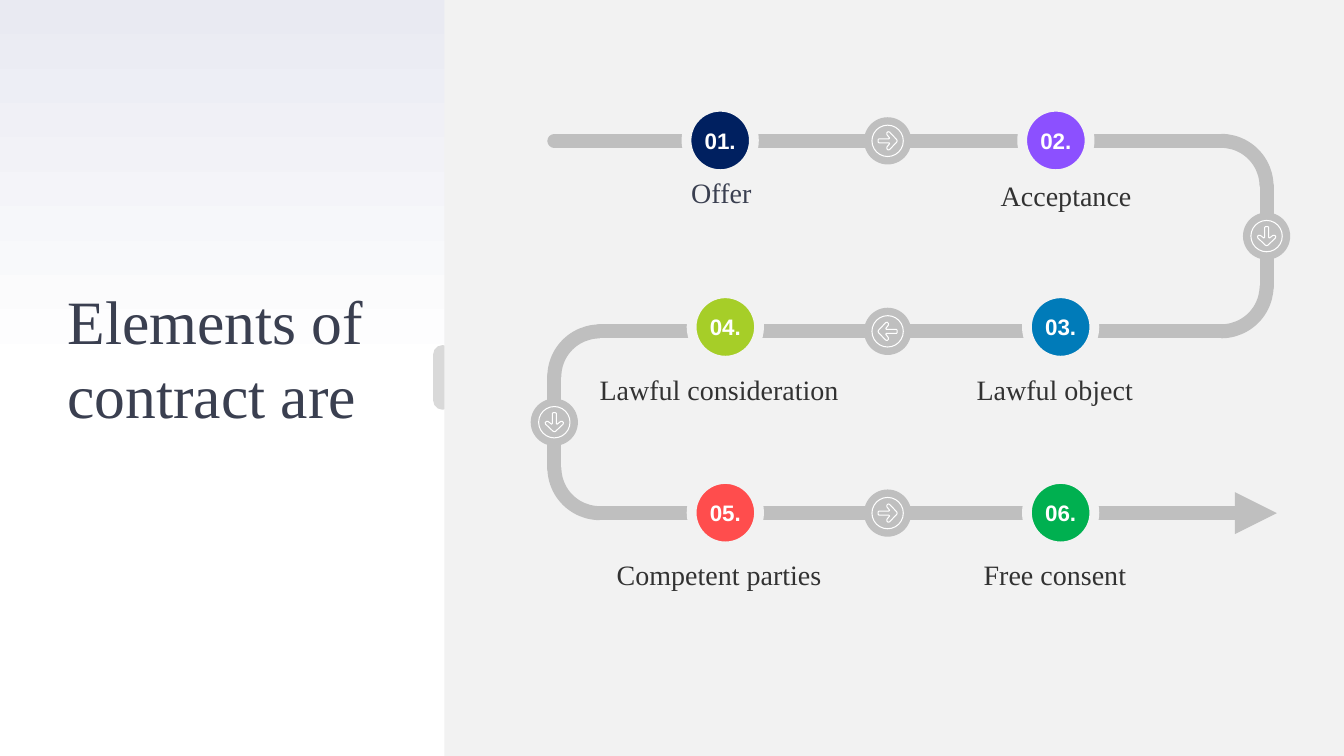
from dataclasses import dataclass
from typing import Optional

from lxml.etree import SubElement
from pptx import Presentation
from pptx.dml.color import RGBColor
from pptx.enum.shapes import MSO_CONNECTOR, MSO_SHAPE
from pptx.enum.text import MSO_ANCHOR, PP_ALIGN
from pptx.oxml.ns import qn
from pptx.util import Cm, Pt

WHITE = RGBColor(0xFF, 0xFF, 0xFF)
LAVENDER = RGBColor(0xE9, 0xEA, 0xF2)
PANEL = RGBColor(0xF2, 0xF2, 0xF2)
TAB = RGBColor(0xD9, 0xD9, 0xD9)
ROUTE = RGBColor(0xBF, 0xBF, 0xBF)
SLATE = RGBColor(0x3A, 0x3F, 0x50)
INK = RGBColor(0x32, 0x32, 0x32)
NAVY = RGBColor(0x00, 0x20, 0x60)
PURPLE = RGBColor(0x8C, 0x50, 0xFF)
BLUE = RGBColor(0x00, 0x7B, 0xB9)
LIME = RGBColor(0xA6, 0xCE, 0x28)
RED = RGBColor(0xFF, 0x4D, 0x4D)
GREEN = RGBColor(0x00, 0xB0, 0x50)

SERIF, SANS = "Times New Roman", "Arial"
LEFT, RIGHT = 13.97, 31.92
ROWS = TOP, MIDDLE, BOTTOM = 3.55, 8.35, 12.93
BEND = 2.29
RADIUS = BEND / 2
ROUTE_WIDTH = 10

ARROW_HALF = [(-0.24, -0.03), (-0.22, -0.05), (0.03, -0.05), (0.05, -0.07),
              (-0.02, -0.16), (-0.02, -0.2), (0.01, -0.23), (0.05, -0.22),
              (0.23, -0.03), (0.24, 0)]
ARROW = ARROW_HALF + [(x, -y) for x, y in reversed(ARROW_HALF[:-1])]


@dataclass
class Step:
    number: int
    label: str
    color: RGBColor
    x: float
    y: float
    label_x: float
    label_y: float
    label_w: float
    ink: RGBColor = INK
    spacing: float = 1.15
    align: PP_ALIGN = PP_ALIGN.JUSTIFY


@dataclass
class Badge:
    x: float
    y: float
    rotation: int = 0


@dataclass
class Bend:
    x: float
    y: float
    rotation: int


@dataclass
class Segment:
    x1: float
    y1: float
    x2: float
    y2: float
    arrow: bool = False


STEPS = [
    Step(1, "Offer", NAVY, 18.15, 3.54, 17.42, 4.43, 1.7, SLATE, 1.0, PP_ALIGN.LEFT),
    Step(2, "Acceptance", PURPLE, 26.61, 3.54, 25.22, 4.37, 3.33, align=PP_ALIGN.LEFT),
    Step(3, "Lawful object", BLUE, 26.73, 8.24, 24.61, 9.25, 3.96),
    Step(4, "Lawful consideration", LIME, 18.28, 8.24, 15.11, 9.25, 6.07),
    Step(5, "Competent parties", RED, 18.28, 12.92, 15.54, 13.92, 5.18),
    Step(6, "Free consent", GREEN, 26.73, 12.92, 24.79, 13.92, 3.61),
]
BADGES = [
    Badge(22.37, TOP),
    Badge(RIGHT, (TOP + MIDDLE) / 2, 90),
    Badge(22.37, MIDDLE, 180),
    Badge(LEFT, (MIDDLE + BOTTOM) / 2, 90),
    Badge(22.37, BOTTOM),
]
BENDS = [
    Bend(RIGHT - BEND, TOP, 0),
    Bend(RIGHT - BEND, MIDDLE - BEND, 90),
    Bend(LEFT, BOTTOM - BEND, 180),
    Bend(LEFT, MIDDLE, 270),
]
SEGMENTS = [
    Segment(LEFT, TOP, RIGHT - RADIUS, TOP),
    Segment(RIGHT, TOP + RADIUS, RIGHT, MIDDLE - RADIUS),
    Segment(LEFT + RADIUS, MIDDLE, RIGHT - RADIUS, MIDDLE),
    Segment(LEFT, BOTTOM - RADIUS, LEFT, MIDDLE + RADIUS),
    Segment(LEFT + RADIUS, BOTTOM, 32.18, BOTTOM, True),
]


def write(tf, text: str, *, size: float, color: RGBColor, font: str = SERIF,
          bold: bool = False, align: PP_ALIGN = PP_ALIGN.LEFT, spacing: float = 1.0,
          anchor: MSO_ANCHOR = MSO_ANCHOR.TOP, wrap: bool = True) -> None:
    tf.margin_left = tf.margin_right = tf.margin_top = tf.margin_bottom = 0
    tf.word_wrap = wrap
    tf.vertical_anchor = anchor
    p = tf.paragraphs[0]
    p.alignment = align
    p.line_spacing = spacing
    r = p.add_run()
    r.text = text
    r.font.name, r.font.size, r.font.bold = font, Pt(size), bold
    r.font.color.rgb = color


def style(sp, fill: Optional[RGBColor] = None, line: Optional[RGBColor] = None,
          width: float = 0.75, rotation: float = 0):
    sp.shadow.inherit = False
    sp.rotation = rotation
    if fill is None:
        sp.fill.background()
    else:
        sp.fill.solid()
        sp.fill.fore_color.rgb = fill
    if line is None:
        sp.line.fill.background()
    else:
        sp.line.color.rgb = line
        sp.line.width = Pt(width)
    return sp


def add_circle(shapes, x: float, y: float, d: float, **look):
    sp = shapes.add_shape(MSO_SHAPE.OVAL, Cm(x - d / 2), Cm(y - d / 2), Cm(d), Cm(d))
    return style(sp, **look)


def add_bend(s, bend: Bend) -> None:
    sp = s.shapes.add_shape(MSO_SHAPE.ARC, Cm(bend.x), Cm(bend.y), Cm(BEND), Cm(BEND))
    style(sp, line=ROUTE, width=ROUTE_WIDTH, rotation=bend.rotation)


def add_segment(s, seg: Segment) -> None:
    c = s.shapes.add_connector(MSO_CONNECTOR.STRAIGHT, Cm(seg.x1), Cm(seg.y1),
                               Cm(seg.x2), Cm(seg.y2))
    c.line.color.rgb = ROUTE
    c.line.width = Pt(ROUTE_WIDTH)
    props = c._element.spPr
    ln = props.find(qn("a:ln"))
    ln.set("cap", "rnd")
    if seg.arrow:
        SubElement(ln, qn("a:tailEnd"), type="triangle")
    SubElement(props, qn("a:effectLst"))


def add_step(s, step: Step) -> None:
    sp = add_circle(s.shapes, step.x, step.y, 1.7, fill=step.color, line=PANEL, width=7)
    write(sp.text_frame, f"{step.number:02d}.", size=16, color=WHITE, font=SANS, bold=True,
          align=PP_ALIGN.CENTER, anchor=MSO_ANCHOR.MIDDLE)
    tb = s.shapes.add_textbox(Cm(step.label_x), Cm(step.label_y), Cm(step.label_w), Cm(0.91))
    write(tb.text_frame, step.label, size=20, color=step.ink, align=step.align,
          spacing=step.spacing, wrap=False)


def add_badge(s, badge: Badge) -> None:
    shapes = s.shapes.add_group_shape().shapes
    add_circle(shapes, badge.x, badge.y, 1.19, fill=ROUTE)
    points = [(Cm(badge.x + x), Cm(badge.y + y)) for x, y in ARROW]
    fb = shapes.build_freeform(*points[0])
    fb.add_line_segments(points[1:], close=True)
    style(fb.convert_to_shape(), line=WHITE, rotation=badge.rotation)
    add_circle(shapes, badge.x, badge.y, 0.79, line=WHITE)


def main() -> None:
    prs = Presentation()
    prs.slide_width, prs.slide_height = Cm(33.87), Cm(19.05)
    s = prs.slides.add_slide(prs.slide_layouts[5])
    bg = s.background.fill
    bg.gradient()
    bg.gradient_angle = 90
    for stop, (position, color) in zip(bg.gradient_stops, [(0.5, WHITE), (1, LAVENDER)]):
        stop.position, stop.color.rgb = position, color

    tab = s.shapes.add_shape(MSO_SHAPE.ROUNDED_RECTANGLE, Cm(10.34), Cm(9.27), Cm(1.63), Cm(0.48))
    tab.adjustments[0] = 0.5
    style(tab, fill=TAB, rotation=270)
    panel = s.shapes.add_shape(MSO_SHAPE.RECTANGLE, Cm(11.2), 0, Cm(22.67), Cm(19.05))
    style(panel, fill=PANEL)

    title = s.shapes.title
    title.left, title.top, title.width, title.height = Cm(1.7), Cm(7.09), Cm(7.77), Cm(3.76)
    write(title.text_frame, "Elements of contract are", size=44, color=SLATE,
          anchor=MSO_ANCHOR.BOTTOM)

    for draw, items in [(add_bend, BENDS), (add_segment, SEGMENTS),
                        (add_step, STEPS), (add_badge, BADGES)]:
        for item in items:
            draw(s, item)
    prs.save("out.pptx")


if __name__ == "__main__":
    main()
